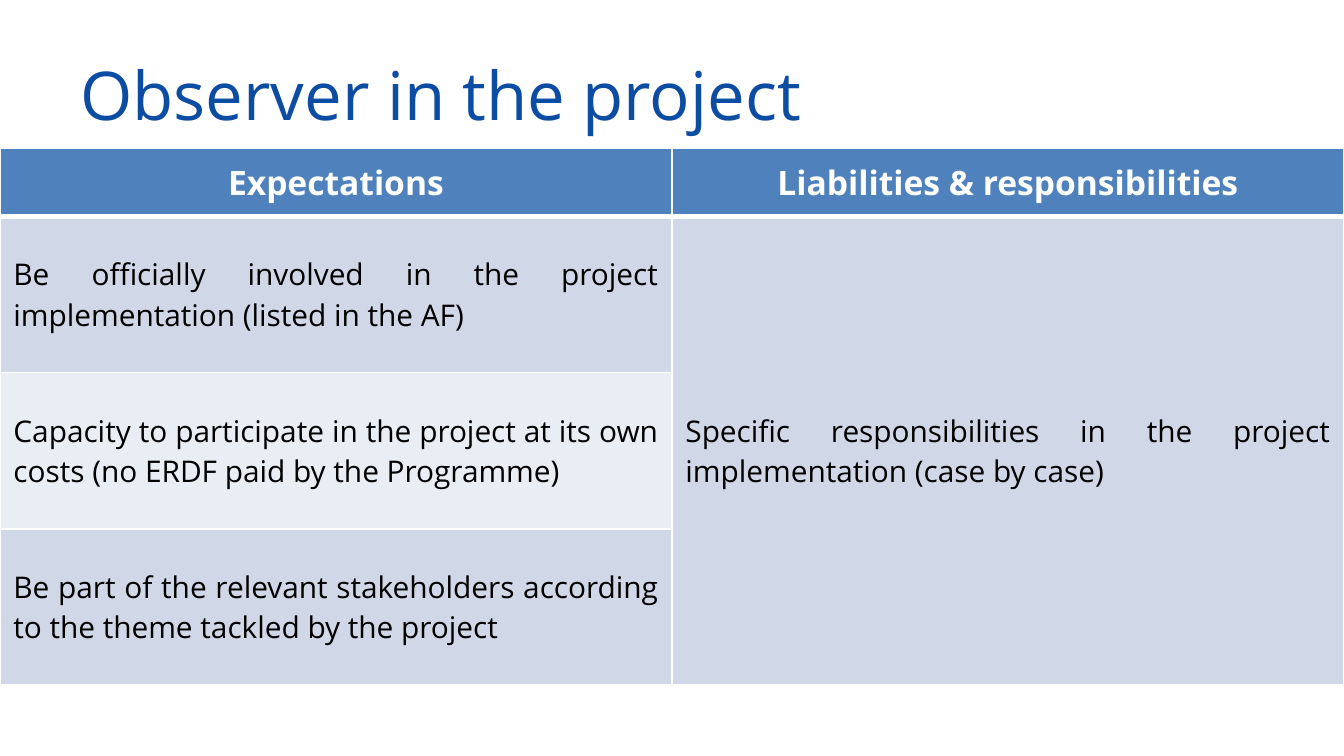
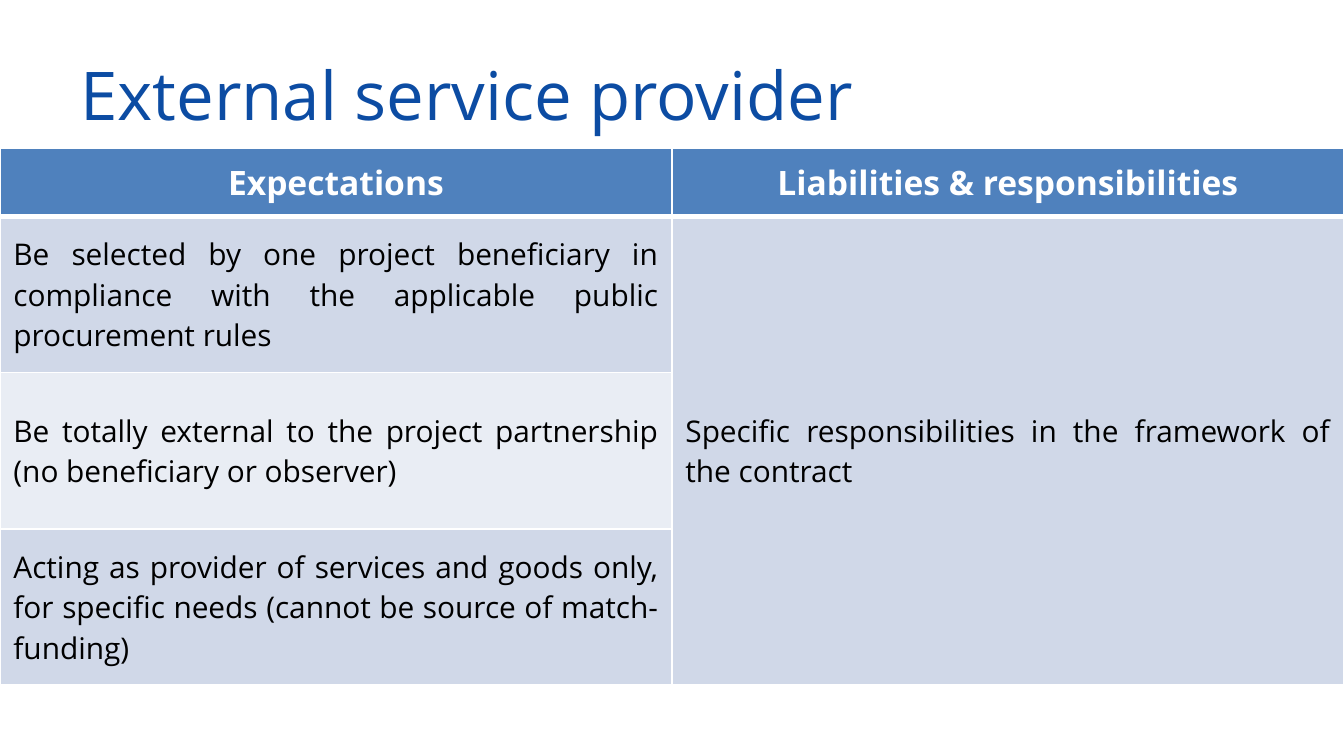
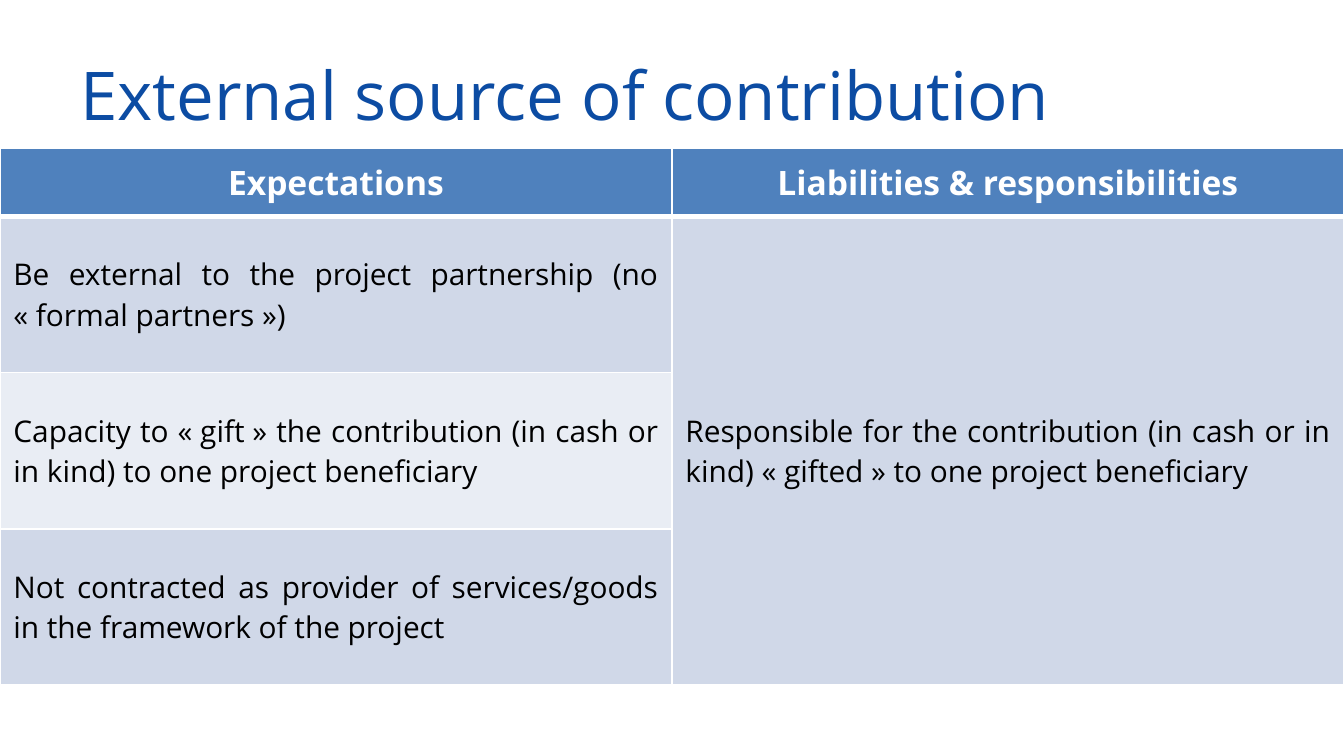
import lxml.etree
import pptx
import pptx.dml.color
import pptx.enum.text
import pptx.oxml.ns
import pptx.util

Inches = pptx.util.Inches
Pt = pptx.util.Pt
ALIGN = pptx.enum.text.PP_ALIGN
MIDDLE = pptx.enum.text.MSO_ANCHOR.MIDDLE

COLORS = {
    "title": "0C4CA3",
    "header": "4F81BD",
    "band_dark": "D0D8E8",
    "band_light": "E9EDF4",
    "white": "FFFFFF",
    "black": "000000",
}
FONT = "Open Sans"
STYLES = {
    "title": {"color": "title", "align": ALIGN.LEFT,
              "font": {"name": FONT, "size": Pt(36), "bold": False}},
    "header": {"color": "white", "align": ALIGN.CENTER,
               "font": {"name": FONT, "size": Pt(18), "bold": True}},
    "body": {"color": "black", "align": ALIGN.JUSTIFY,
             "font": {"name": FONT, "size": Pt(16), "bold": False}},
}
HEADINGS = ["Expectations", "Liabilities & responsibilities"]
SLIDE_WIDTH = 10
COLUMN_WIDTH = SLIDE_WIDTH / len(HEADINGS)
TABLE_HEIGHT = 4
HEADER_HEIGHT = 0.51
THIN, THICK = 1, 3
HARD_SPACE = chr(160)


def quoted(words):
    return HARD_SPACE.join(["«", words, "»"])


ROLES = [
    {
        "title": "Observer in the project",
        "expectations": [
            "Be officially involved in the project implementation (listed in the AF)",
            "Capacity to participate in the project at its own costs (no ERDF paid by the Programme)",
            "Be part of the relevant stakeholders according to the theme tackled by the project",
        ],
        "liability": "Specific responsibilities in the project implementation (case by case)",
    },
    {
        "title": "External service provider",
        "expectations": [
            "Be selected by one project beneficiary in compliance with the applicable public procurement rules",
            "Be totally external to the project partnership (no beneficiary or observer)",
            "Acting as provider of services and goods only, for specific needs (cannot be source of match-funding)",
        ],
        "liability": "Specific responsibilities in the framework of the contract",
    },
    {
        "title": "External source of contribution",
        "expectations": [
            f"Be external to the project partnership (no {quoted('formal partners')})",
            f"Capacity to {quoted('gift')} the contribution (in cash or in kind) to one project beneficiary",
            "Not contracted as provider of services/goods in the framework of the project",
        ],
        "liability": f"Responsible for the contribution (in cash or in kind) {quoted('gifted')} to one project beneficiary",
    },
]


def rgb(color):
    return pptx.dml.color.RGBColor.from_string(COLORS[color])


def write(frame, text, style_name):
    style = STYLES[style_name]
    paragraph = frame.paragraphs[0]
    paragraph.alignment = style["align"]
    run = paragraph.add_run()
    run.text = text
    for attribute, value in style["font"].items():
        setattr(run.font, attribute, value)
    run.font.color.rgb = rgb(style["color"])


def add_title(slide, text):
    title = slide.shapes.add_textbox(Inches(0.5), Inches(0.23), Inches(9), Inches(0.94))
    title.text_frame.word_wrap = True
    title.text_frame.vertical_anchor = MIDDLE
    write(title.text_frame, text, "title")


def add_borders(cell, top, bottom):
    qn = pptx.oxml.ns.qn
    properties = cell._tc.get_or_add_tcPr()
    for side, width in {"L": THIN, "R": THIN, "T": top, "B": bottom}.items():
        line = lxml.etree.SubElement(properties, qn(f"a:ln{side}"), w=str(Pt(width)))
        fill = lxml.etree.SubElement(line, qn("a:solidFill"))
        lxml.etree.SubElement(fill, qn("a:srgbClr"), val=COLORS["white"])


def format_cell(cell, row, column):
    add_borders(cell, THICK if row == 1 else THIN, THICK if row == 0 else THIN)
    if row == 0:
        band = "header"
    else:
        band = "band_light" if column == 0 and row % 2 == 0 else "band_dark"
    cell.fill.solid()
    cell.fill.fore_color.rgb = rgb(band)
    cell.vertical_anchor = MIDDLE


def add_role_table(slide, expectations, liability):
    row_height = (TABLE_HEIGHT - HEADER_HEIGHT) / len(expectations)
    heights = [HEADER_HEIGHT] + [row_height] * len(expectations)
    table = slide.shapes.add_table(
        len(heights), len(HEADINGS), Inches(0), Inches(1.1),
        Inches(SLIDE_WIDTH), Inches(TABLE_HEIGHT),
    ).table
    for column in table.columns:
        column.width = Inches(COLUMN_WIDTH)
    for row, height in enumerate(heights):
        table.rows[row].height = Inches(height)
        for column in range(len(HEADINGS)):
            format_cell(table.cell(row, column), row, column)
    table.cell(1, 1).merge(table.cell(len(expectations), 1))

    for column, heading in enumerate(HEADINGS):
        write(table.cell(0, column).text_frame, heading, "header")
    for row, expectation in enumerate(expectations, start=1):
        write(table.cell(row, 0).text_frame, expectation, "body")
    write(table.cell(1, 1).text_frame, liability, "body")


def main():
    presentation = pptx.Presentation()
    presentation.slide_width = Inches(SLIDE_WIDTH)
    presentation.slide_height = Inches(SLIDE_WIDTH * 9 / 16)
    blank = presentation.slide_layouts[6]
    for role in ROLES:
        slide = presentation.slides.add_slide(blank)
        add_title(slide, role["title"])
        add_role_table(slide, role["expectations"], role["liability"])
    presentation.save("out.pptx")


if __name__ == "__main__":
    main()
